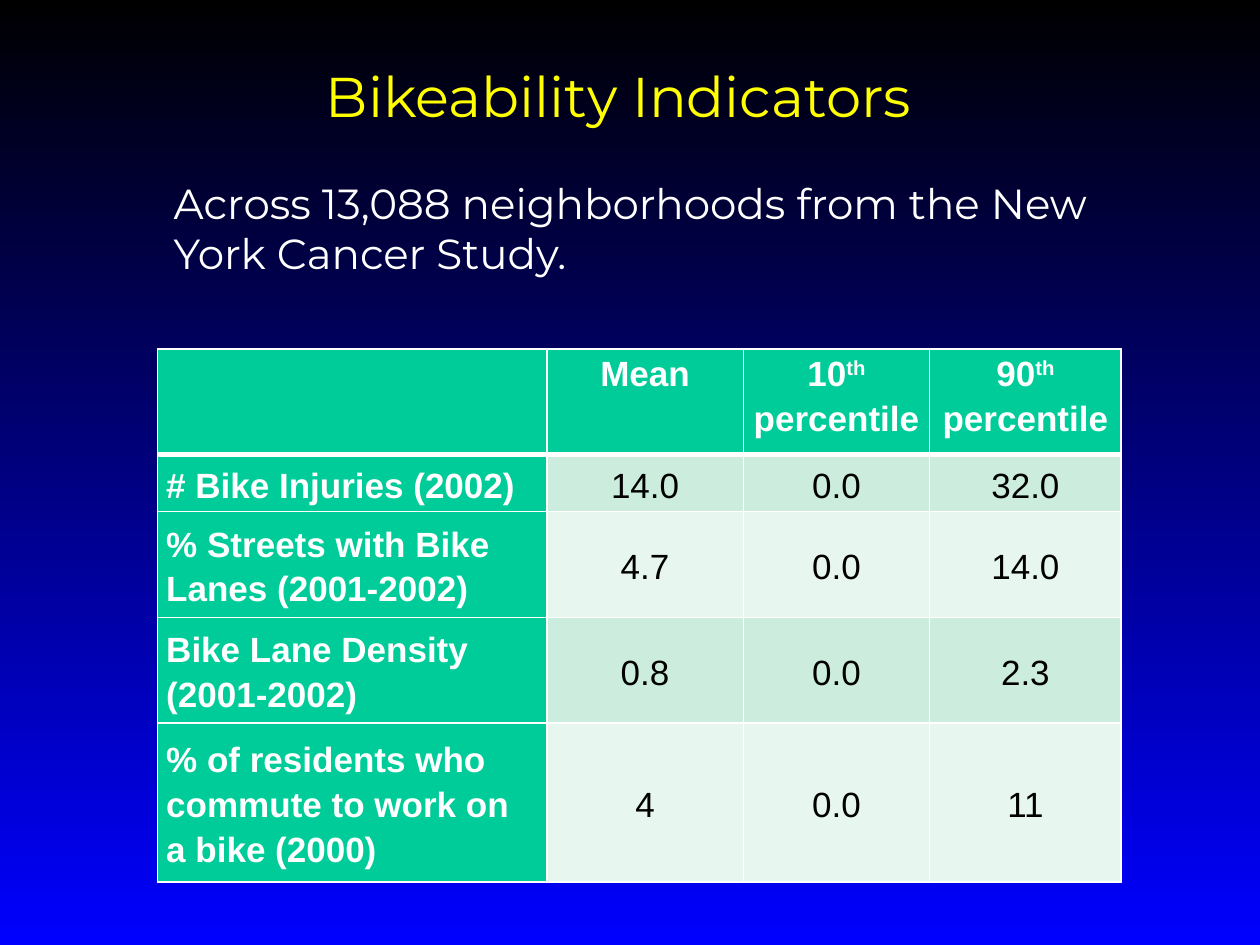
import pptx
import pptx.util
import pptx.dml.color
import pptx.enum.text
import pptx.oxml.ns
import lxml.etree

Pt = pptx.util.Pt
RGBColor = pptx.dml.color.RGBColor
PP_ALIGN = pptx.enum.text.PP_ALIGN
MSO_ANCHOR = pptx.enum.text.MSO_ANCHOR
MSO_AUTO_SIZE = pptx.enum.text.MSO_AUTO_SIZE

BLACK = RGBColor(0x00, 0x00, 0x00)
WHITE = RGBColor(0xFF, 0xFF, 0xFF)
BLUE = RGBColor(0x00, 0x00, 0xFF)
YELLOW = RGBColor(0xFF, 0xFF, 0x00)
GREEN = RGBColor(0x00, 0xCC, 0x99)
BANDS = (RGBColor(0xCC, 0xEC, 0xDE), RGBColor(0xE7, 0xF6, 0xEF))

HEADERS = [("",), ("Mean",), ("10", "th", " percentile"), ("90", "th", " percentile")]
INDICATORS = [
    ("# Bike Injuries (2002)", "14.0", "0.0", "32.0"),
    ("% Streets with Bike Lanes (2001-2002)", "4.7", "0.0", "14.0"),
    ("Bike Lane Density (2001-2002)", "0.8", "0.0", "2.3"),
    ("% of residents who commute to work on a bike (2000)", "4", "0.0", "11"),
]
COLUMN_WIDTHS = (222.5, 112.3, 106.5, 109.4)
ROW_HEIGHTS = (60.5, 32.4, 60.5, 60.5, 90.7)


def style_font(font, name, size, color, bold=False):
    font.name = name
    font.size = Pt(size)
    font.color.rgb = color
    font.bold = bold


def paint_background(slide):
    fill = slide.background.fill
    fill.gradient()
    fill.gradient_angle = 270
    for stop, color, position in zip(fill.gradient_stops, (BLACK, BLUE), (0, 1)):
        stop.color.rgb = color
        stop.position = position


def place_text(shape, box, text, size, color, alignment):
    shape.left, shape.top, shape.width, shape.height = map(Pt, box)
    frame = shape.text_frame
    frame.text = text
    frame.word_wrap = True
    frame.auto_size = MSO_AUTO_SIZE.NONE
    frame.vertical_anchor = MSO_ANCHOR.TOP
    paragraph = frame.paragraphs[0]
    paragraph.alignment = alignment
    style_font(paragraph.runs[0].font, "Montserrat", size, color)


def add_borders(cell, top, bottom):
    properties = cell._tc.get_or_add_tcPr()
    widths = {"a:lnL": 1, "a:lnR": 1, "a:lnT": top, "a:lnB": bottom}
    for index, (side, width) in enumerate(widths.items()):
        line = lxml.etree.Element(pptx.oxml.ns.qn(side), w=str(Pt(width)))
        solid = lxml.etree.SubElement(line, pptx.oxml.ns.qn("a:solidFill"))
        lxml.etree.SubElement(solid, pptx.oxml.ns.qn("a:srgbClr"), val=str(WHITE))
        properties.insert(index, line)


def fill_cell(cell, pieces, fill, color, bold, alignment, anchor):
    cell.fill.solid()
    cell.fill.fore_color.rgb = fill
    cell.margin_left = cell.margin_right = Pt(5)
    cell.margin_top = cell.margin_bottom = Pt(0)
    cell.vertical_anchor = anchor
    paragraph = cell.text_frame.paragraphs[0]
    paragraph.alignment = alignment
    paragraph.line_spacing = 1.15
    for piece in filter(None, pieces):
        run = paragraph.add_run()
        run.text = piece
        style_font(run.font, "Arial", 20, color, bold)
        if piece == "th":
            run._r.get_or_add_rPr().set("baseline", "30000")


def add_indicator_table(slide, box):
    rows = [HEADERS] + [[(value,) for value in row] for row in INDICATORS]
    table = slide.shapes.add_table(len(rows), len(HEADERS), *map(Pt, box)).table
    for column, width in zip(table.columns, COLUMN_WIDTHS):
        column.width = Pt(width)
    for row, height in zip(table.rows, ROW_HEIGHTS):
        row.height = Pt(height)
    for r, values in enumerate(rows):
        for c, pieces in enumerate(values):
            heading = r == 0 or c == 0
            cell = table.cell(r, c)
            fill_cell(
                cell,
                pieces,
                fill=GREEN if heading else BANDS[(r - 1) % 2],
                color=WHITE if heading else BLACK,
                bold=heading,
                alignment=PP_ALIGN.LEFT if c == 0 else PP_ALIGN.CENTER,
                anchor=MSO_ANCHOR.TOP if r == 0 else MSO_ANCHOR.MIDDLE,
            )
            add_borders(cell, top=3 if r == 1 else 1, bottom=3 if r == 0 else 1)


def main():
    presentation = pptx.Presentation()
    presentation.slide_width, presentation.slide_height = Pt(720), Pt(540)
    slide = presentation.slides.add_slide(presentation.slide_layouts[5])
    paint_background(slide)
    place_text(slide.shapes.title, (46, 31.7, 623.5, 46),
               "Bikeability Indicators ", 32, YELLOW, PP_ALIGN.CENTER)
    add_indicator_table(slide, (90, 199.4, 550.7, 304.6))
    sample = slide.shapes.add_textbox(0, 0, 0, 0)
    place_text(sample, (92.2, 97.9, 542.9, 65.5),
               "Across 13,088 neighborhoods from the New York Cancer Study.",
               24, WHITE, PP_ALIGN.LEFT)
    presentation.save("out.pptx")


if __name__ == "__main__":
    main()
